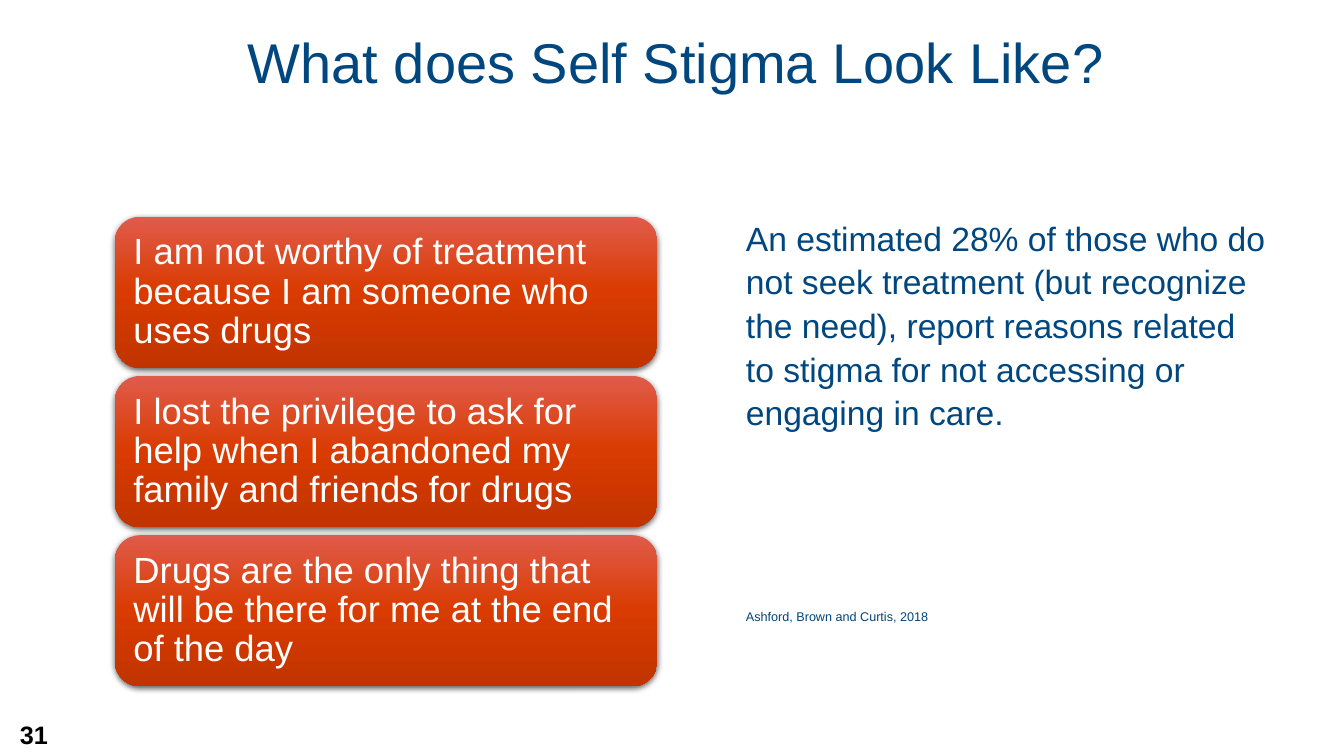
from copy import deepcopy

from lxml import etree
from pptx import Presentation
from pptx.dml.color import RGBColor
from pptx.enum.shapes import MSO_SHAPE
from pptx.enum.text import MSO_ANCHOR, PP_ALIGN
from pptx.oxml import parse_xml
from pptx.oxml.ns import qn
from pptx.util import Inches, Pt

ROUNDED = MSO_SHAPE.ROUNDED_RECTANGLE
TOP, MIDDLE = MSO_ANCHOR.TOP, MSO_ANCHOR.MIDDLE
LEFT, CENTER = PP_ALIGN.LEFT, PP_ALIGN.CENTER

COLORS = {
    "navy": "00467F",
    "black": "000000",
    "white": "FFFFFF",
    "card_top": "E05B4B",
    "card_middle": "D93B00",
    "card_bottom": "C13400",
}
CARD_GRADIENT = [(0, "card_top"), (0.5, "card_middle"), (1, "card_bottom")]
CARD_SHADOW = (
    '<a:outerShdw xmlns:a="http://schemas.openxmlformats.org/drawingml/2006/main" '
    'blurRad="57150" dist="19050" dir="5400000" algn="ctr" rotWithShape="0">'
    f'<a:srgbClr val="{COLORS["black"]}"><a:alpha val="63000"/></a:srgbClr>'
    "</a:outerShdw>"
)
STATEMENTS = [
    "I am not worthy of treatment because I am someone who uses drugs",
    "I lost the privilege to ask for help when I abandoned my family and friends for drugs",
    "Drugs are the only thing that will be there for me at the end of the day",
]

prs = Presentation()
prs.slide_width, prs.slide_height = Inches(13.33), Inches(7.5)
slide = prs.slides.add_slide(prs.slide_layouts[6])


def write(shape, text, size, color, align=LEFT, anchor=TOP, spacing=1.0, bold=False):
    frame = shape.text_frame
    frame.word_wrap = True
    frame.vertical_anchor = anchor
    paragraph = frame.paragraphs[0]
    paragraph.text = text
    paragraph.alignment = align
    paragraph.line_spacing = spacing
    font = paragraph.font
    font.name, font.size, font.bold = "Arial", Pt(size), bold
    font.color.rgb = RGBColor.from_string(COLORS[color])


def add_text(left, top, width, height, *args, **options):
    box = slide.shapes.add_textbox(Inches(left), Inches(top), Inches(width), Inches(height))
    write(box, *args, **options)


add_text(0.1, 7.09, 0.54, 0.4, "31", 18, "black", bold=True)
add_text(0, 0.03, 13.4, 1.15, "What does Self Stigma Look Like?", 40, "navy",
         align=CENTER, anchor=MIDDLE)
add_text(7.3, 2.08, 5.38, 2.5,
         "An estimated 28% of those who do not seek treatment (but recognize the need), "
         "report reasons related to stigma for not accessing or engaging in care.",
         24, "navy", spacing=1.08)
add_text(7.3, 5.98, 5.38, 0.3, "Ashford, Brown and Curtis, 2018", 9, "navy", spacing=1.08)

for row, statement in enumerate(STATEMENTS):
    card = slide.shapes.add_shape(
        ROUNDED, Inches(1.14), Inches(2.15 + row * 1.58), Inches(5.38), Inches(1.5))
    card.line.fill.background()

    card.fill.gradient()
    card.fill.gradient_angle = 270
    stop_list = card.fill._xPr.find(qn("a:gradFill")).find(qn("a:gsLst"))
    stop_list.append(deepcopy(stop_list[0]))
    for stop, (position, color) in zip(card.fill.gradient_stops, CARD_GRADIENT):
        stop.position = position
        stop.color.rgb = RGBColor.from_string(COLORS[color])

    card.shadow.inherit = False
    effects = card._element.spPr.find(qn("a:effectLst"))
    effects.append(parse_xml(CARD_SHADOW))

    write(card, statement, 26, "white", anchor=MIDDLE, spacing=0.9)
    # The rounded corners already add 0.07 inches to the text inset
    card.text_frame.margin_left = card.text_frame.margin_right = Inches(0.11)

prs.save("out.pptx")
